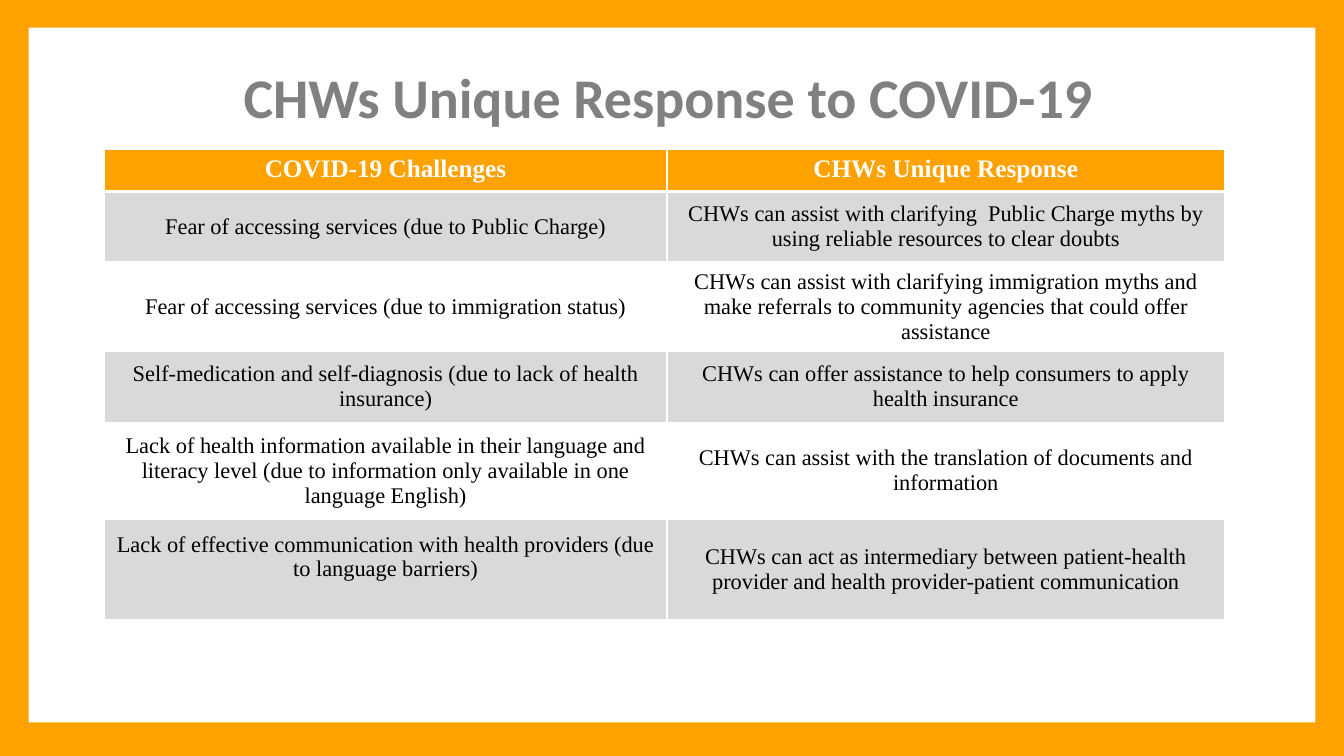
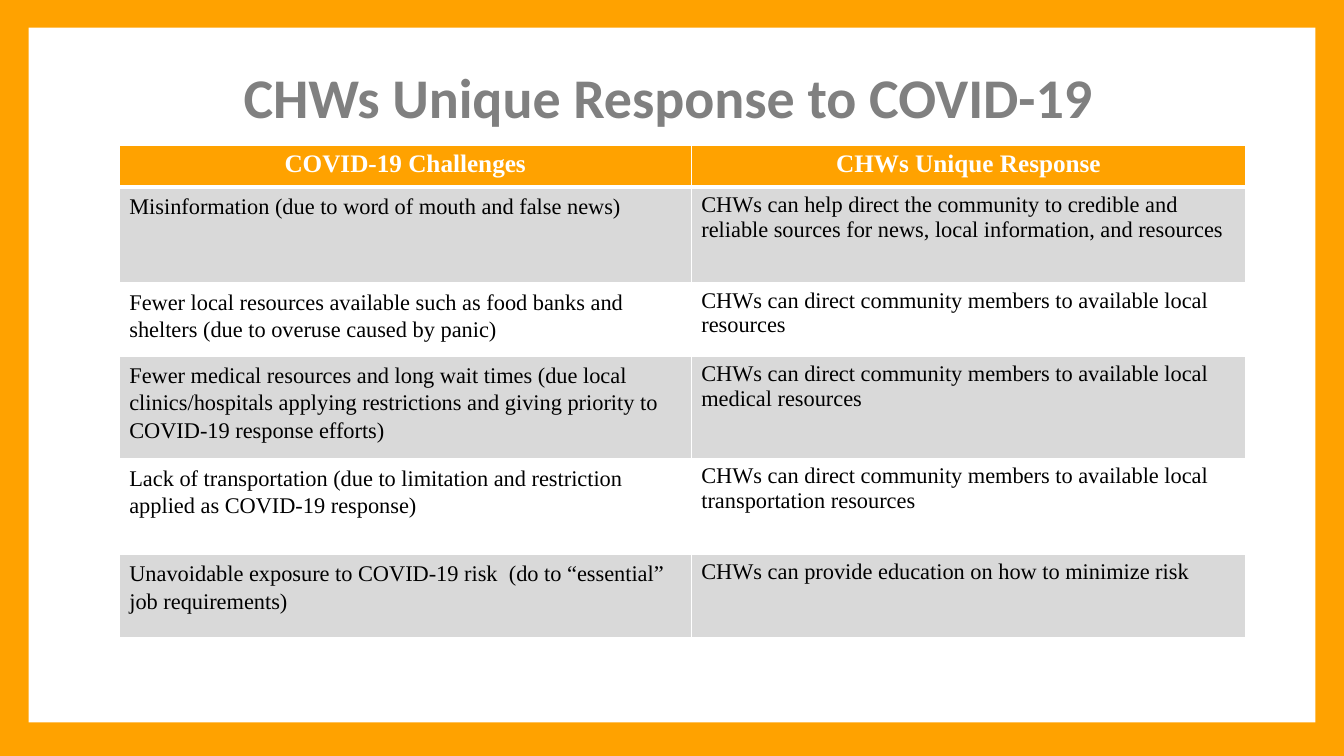
from lxml.etree import SubElement
from pptx import Presentation
from pptx.dml.color import RGBColor as Rgb
from pptx.enum.shapes import MSO_SHAPE as Shape
from pptx.enum.text import MSO_ANCHOR as Anchor, PP_ALIGN as Align
from pptx.oxml.ns import qn
from pptx.util import Inches, Pt

COLORS = {"orange": "FFA200", "white": "FFFFFF", "gray": "808080",
          "band": "D9D9D9", "black": "000000"}
UNITS_PER_INCH = 12
TITLE = "CHWs Unique Response to COVID-19"
HEADINGS = ("COVID-19 Challenges", "CHWs Unique Response")

ACCESS_ROWS = [
    ("Fear of accessing services (due to Public Charge)",
     "CHWs can assist with clarifying  Public Charge myths by using reliable resources to clear doubts"),
    ("Fear of accessing services (due to immigration status)",
     "CHWs can assist with clarifying immigration myths and make referrals to community agencies "
     "that could offer assistance"),
    ("Self-medication and self-diagnosis (due to lack of health insurance)",
     "CHWs can offer assistance to help consumers to apply health insurance"),
    ("Lack of health information available in their language and literacy level "
     "(due to information only available in one language English)",
     "CHWs can assist with the translation of documents and information"),
    ("Lack of effective communication with health providers (due to language barriers)",
     "CHWs can act as intermediary between patient-health provider and health provider-patient communication"),
]
RESOURCE_ROWS = [
    ("Misinformation (due to word of mouth and false news)",
     "CHWs can help direct the community to credible and reliable sources for news, "
     "local information, and resources"),
    ("Fewer local resources available such as food banks and shelters (due to overuse caused by panic)",
     "CHWs can direct community members to available local resources"),
    ("Fewer medical resources and long wait times (due local clinics/hospitals applying "
     "restrictions and giving priority to COVID-19 response efforts)",
     "CHWs can direct community members to available local medical resources"),
    ("Lack of transportation (due to limitation and restriction applied as COVID-19 response)",
     "CHWs can direct community members to available local transportation resources"),
    ("Unavoidable exposure to COVID-19 risk  (do to “essential” job requirements)",
     "CHWs can provide education on how to minimize risk"),
]


def color(name):
    """Return a palette colour."""
    return Rgb.from_string(COLORS[name])


def units(count):
    """Convert columns or rows of the 160 by 90 grid to a length."""
    return Inches(count / UNITS_PER_INCH)


def assign(target, values):
    """Set several attributes of one object."""
    for name, value in values.items():
        setattr(target, name, value)


class Deck:
    """Hold the deck style and the current page."""

    title_font = {"name": "Calibri", "size": Pt(40), "bold": True}
    heading_font = {"name": "Times New Roman", "size": Pt(18), "bold": True}
    body_font = {"name": "Times New Roman", "size": Pt(16), "bold": False}

    def __init__(self):
        """Start a deck with an orange background."""
        self.deck = Presentation()
        assign(self.deck, {"slide_width": units(160), "slide_height": units(90)})
        self.layout = self.deck.slide_layouts[5]
        fill = self.deck.slide_master.background.fill
        fill.solid()
        fill.fore_color.rgb = color("orange")
        self.page = None

    def add_page(self, title):
        """Add a titled page, with the shared panel on the layout."""
        first = self.page is None
        self.page = self.deck.slides.add_slide(self.layout)
        if first:
            self.add_panel()
        self.add_title(title)

    def add_panel(self):
        """Place the white panel behind everything on the layout."""
        panel = self.page.shapes.add_shape(
            Shape.RECTANGLE, *map(units, (3.4, 3.3, 153.2, 82.7)))
        panel.shadow.inherit = False
        panel.fill.solid()
        panel.fill.fore_color.rgb = color("white")
        panel.line.fill.background()
        self.layout.shapes.element.insert(2, panel.element)

    def add_title(self, text):
        """Fill and place the title placeholder."""
        box = self.page.shapes.title
        assign(box, dict(zip(("left", "top", "width", "height"),
                             map(units, (27.8, 7.8, 107.9, 10.3)))))
        assign(box.text_frame, {"vertical_anchor": Anchor.TOP, "word_wrap": True})
        self.add_text(box.text_frame, text, self.title_font, "gray",
                      {"alignment": Align.LEFT, "line_spacing": 0.9})

    def add_text(self, frame, text, font, ink, layout):
        """Add one formatted paragraph."""
        para = frame.paragraphs[0]
        span = para.add_run()
        span.text = text
        assign(para, layout)
        assign(span.font, font)
        span.font.color.rgb = color(ink)

    def add_borders(self, cell, bottom, top):
        """Draw the white borders of a cell."""
        properties = cell._tc.get_or_add_tcPr()
        for side, width in (("L", 1), ("R", 1), ("T", top), ("B", bottom)):
            line = SubElement(properties, qn(f"a:ln{side}"), w=str(Pt(width)))
            fill = SubElement(line, qn("a:solidFill"))
            SubElement(fill, qn("a:srgbClr"), val=COLORS["white"])

    def add_cell(self, cell, text, fill, ink, font, layout, anchor, edges):
        """Format and fill one table cell."""
        self.add_borders(cell, *edges)
        cell.fill.solid()
        cell.fill.fore_color.rgb = color(fill)
        cell.vertical_anchor = anchor
        self.add_text(cell.text_frame, text, font, ink, layout)

    def add_table(self, corner, widths, heights, rows, layouts, anchor):
        """Add a two-column table with a heading and banded rows."""
        size = (sum(widths), sum(heights))
        table = self.page.shapes.add_table(
            len(heights), len(widths), *map(units, corner + size)).table
        for column, width in zip(table.columns, widths):
            column.width = units(width)
        for row, height in zip(table.rows, heights):
            row.height = units(height)
        for place, text in enumerate(HEADINGS):
            self.add_cell(table.cell(0, place), text, "orange", "white", self.heading_font,
                          {"alignment": Align.CENTER}, Anchor.TOP, (3, 1))
        for number, texts in enumerate(rows, 1):
            fill = "band" if number % 2 else "white"
            edges = (1, 3 if number == 1 else 1)
            for place, (text, layout) in enumerate(zip(texts, layouts)):
                self.add_cell(table.cell(number, place), text, fill, "black",
                              self.body_font, layout, anchor, edges)
        return table


def main():
    """Build and save the deck."""
    deck = Deck()
    deck.add_page(TITLE)
    centered = {"alignment": Align.CENTER}
    table = deck.add_table((12.4, 17.8), (67, 66.4), (5, 8.4, 10.6, 8.5, 11.5, 12),
                           ACCESS_ROWS, (centered, centered), Anchor.MIDDLE)
    table.cell(5, 0).margin_bottom = units(3.6)
    deck.add_page(TITLE)
    loose = {"alignment": Align.LEFT, "line_spacing": 1.1}
    plain = {"alignment": Align.LEFT}
    deck.add_table((14.2, 17.3), (68.1, 66), (5, 11.4, 8.7, 12.2, 11.4, 9.9),
                   RESOURCE_ROWS, (loose, plain), Anchor.TOP)
    deck.deck.save("out.pptx")


if __name__ == "__main__":
    main()
